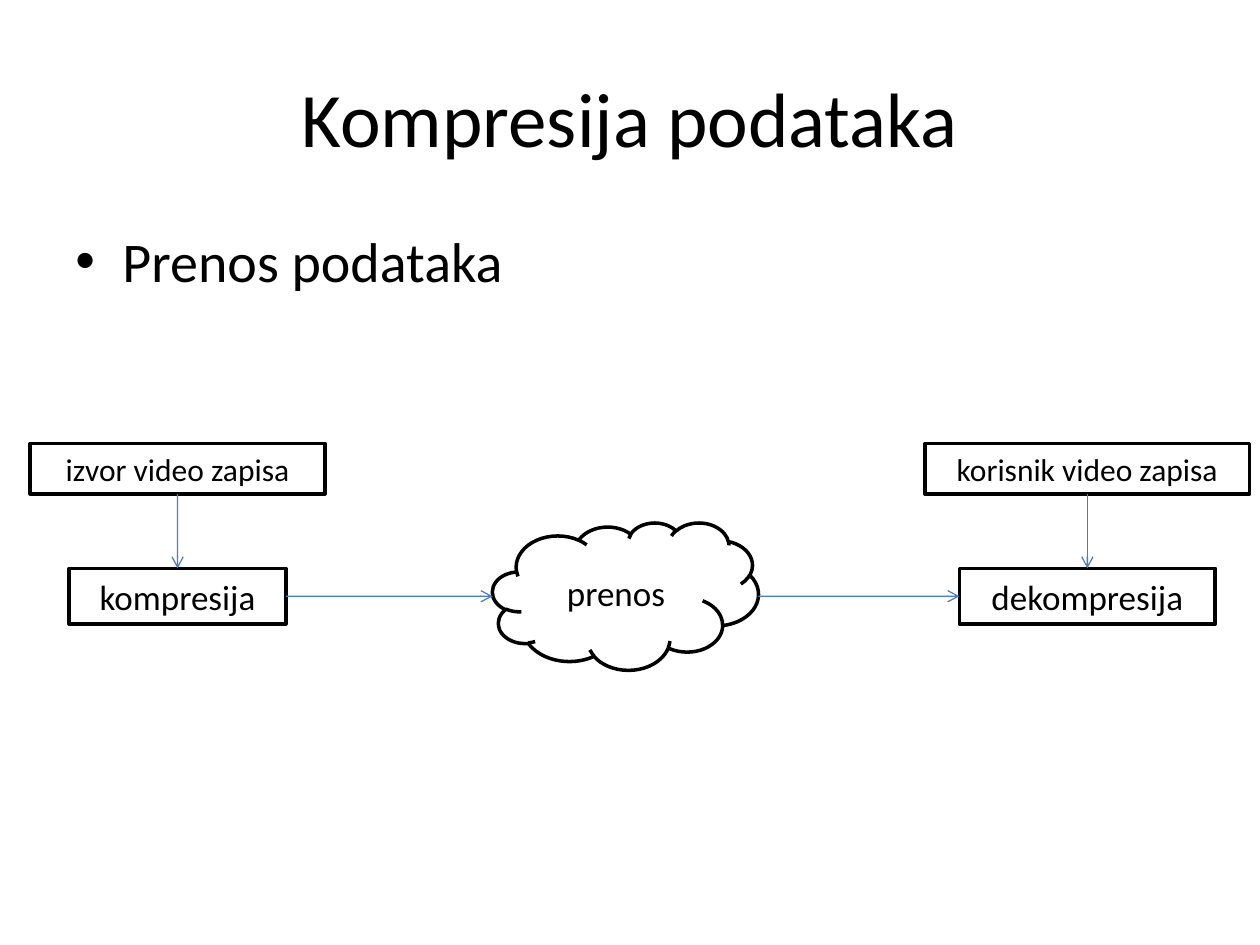
from lxml import etree
from pptx import Presentation
from pptx.dml.color import RGBColor
from pptx.enum.shapes import MSO_CONNECTOR, MSO_SHAPE
from pptx.enum.text import MSO_ANCHOR, PP_ALIGN
from pptx.oxml.ns import qn
from pptx.util import Cm, Pt

RECT, CLOUD = MSO_SHAPE.RECTANGLE, MSO_SHAPE.CLOUD
LINE = MSO_CONNECTOR.STRAIGHT
TOP, MID = MSO_ANCHOR.TOP, MSO_ANCHOR.MIDDLE
LEFT, MIDDLE = PP_ALIGN.LEFT, PP_ALIGN.CENTER

FONT = "Calibri"
COLOR = {"ink": "000000", "paper": "FFFFFF", "arrow": "4B7EBC"}

TITLE = "Kompresija podataka"
POINT = "Prenos podataka"

COL = {"source": 3.58, "net": 12.61, "user": 21.92}
ROW = {"ends": 9.45, "flow": 12.02}

NODES = [
    ("izvor video zapisa", RECT, "source", "ends", 5.94, 1.02, 18),
    ("kompresija", RECT, "source", "flow", 4.37, 1.12, 20),
    ("dekompresija", RECT, "user", "flow", 5.16, 1.12, 20),
    ("korisnik video zapisa", RECT, "user", "ends", 6.55, 1.02, 18),
    ("prenos", CLOUD, "net", "flow", 5.36, 2.97, 20),
]
LINKS = [
    ("izvor video zapisa", 2, "kompresija", 0),
    ("korisnik video zapisa", 2, "dekompresija", 0),
    ("kompresija", 3, "prenos", 1),
    ("prenos", 3, "dekompresija", 1),
]


def rgb(name):
    return RGBColor.from_string(COLOR[name])


def write(shape, text, size=20, align=MIDDLE, anchor=MID, bullet=False):
    frame = shape.text_frame
    frame.word_wrap = True
    frame.vertical_anchor = anchor
    para = frame.paragraphs[0]
    para.alignment = align
    run = para.add_run()
    run.text = text
    run.font.name = FONT
    run.font.size = Pt(size)
    run.font.color.rgb = rgb("ink")
    if bullet:
        para.space_before = Pt(size * 0.2)
        props = para._p.get_or_add_pPr()
        props.set("marL", str(Cm(0.95)))
        props.set("indent", str(-Cm(0.95)))
        etree.SubElement(props, qn("a:buFont")).set("typeface", "Arial")
        etree.SubElement(props, qn("a:buChar")).set("char", "•")


def side(shape, spot):
    midx = shape.left + shape.width // 2
    midy = shape.top + shape.height // 2
    return [
        (midx, shape.top),
        (shape.left, midy),
        (midx, shape.top + shape.height),
        (shape.left + shape.width, midy),
    ][spot]


def node(slide, text, kind, col, row, wide, high, size):
    shape = slide.shapes.add_shape(
        kind, Cm(COL[col] - wide / 2), Cm(ROW[row] - high / 2), Cm(wide), Cm(high)
    )
    shape.shadow.inherit = False
    shape.fill.solid()
    shape.fill.fore_color.rgb = rgb("paper")
    shape.line.color.rgb = rgb("ink")
    shape.line.width = Pt(2)
    write(shape, text, size=size)
    return shape


def link(slide, start, out, end, into):
    line = slide.shapes.add_connector(LINE, *side(start, out), *side(end, into))
    if start.auto_shape_type == RECT:
        line.begin_connect(start, out)
    if end.auto_shape_type == RECT:
        line.end_connect(end, into)
    line.line.color.rgb = rgb("arrow")
    line.line.width = Pt(0.75)
    etree.SubElement(line.line._get_or_add_ln(), qn("a:tailEnd")).set("type", "arrow")
    etree.SubElement(line._element.spPr, qn("a:effectLst"))


def main():
    deck = Presentation()
    deck.slide_width, deck.slide_height = Cm(25.4), Cm(19.05)
    slide = deck.slides.add_slide(deck.slide_layouts[6])

    head = slide.shapes.add_textbox(Cm(1.27), Cm(0.76), Cm(22.86), Cm(3.18))
    write(head, TITLE, size=44)
    body = slide.shapes.add_textbox(Cm(1.27), Cm(4.45), Cm(22.86), Cm(1.5))
    write(body, POINT, size=32, align=LEFT, anchor=TOP, bullet=True)

    nodes = {item[0]: node(slide, *item) for item in NODES}
    for start, out, end, into in LINKS:
        link(slide, nodes[start], out, nodes[end], into)
    deck.save("out.pptx")


if __name__ == "__main__":
    main()
